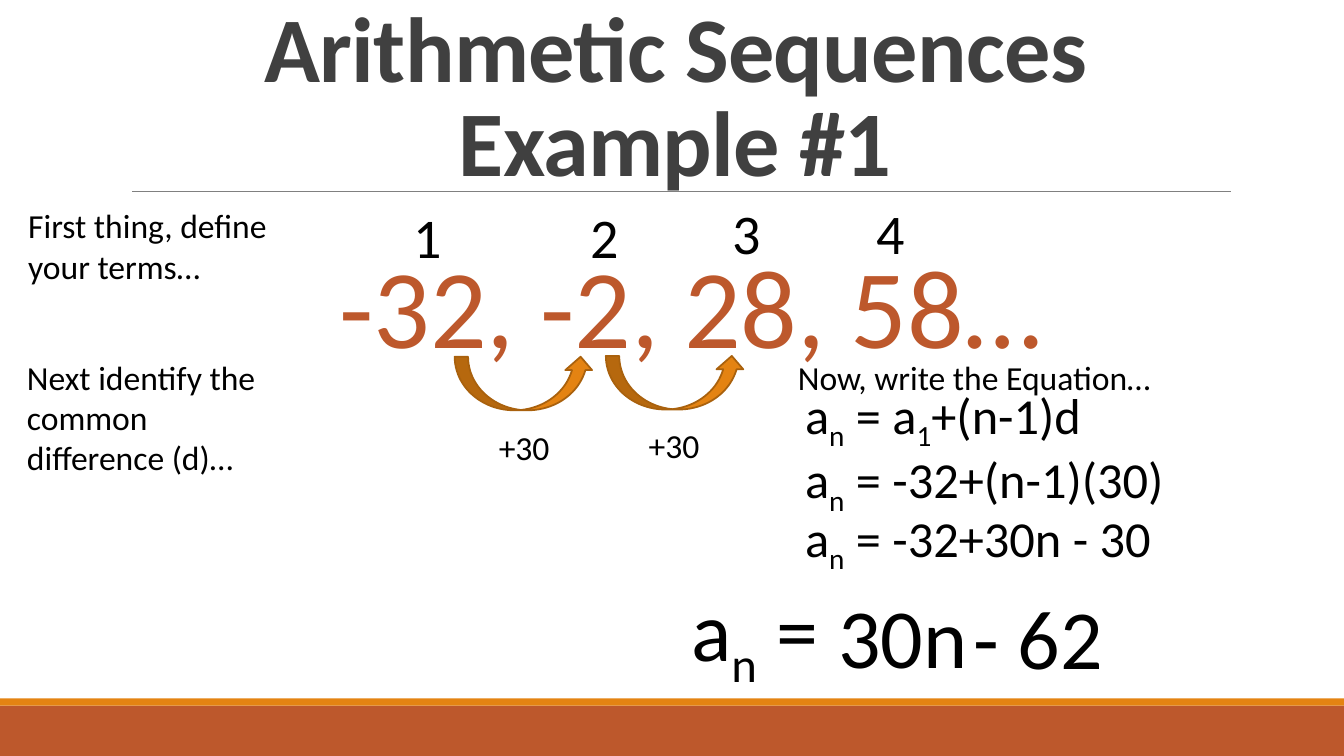
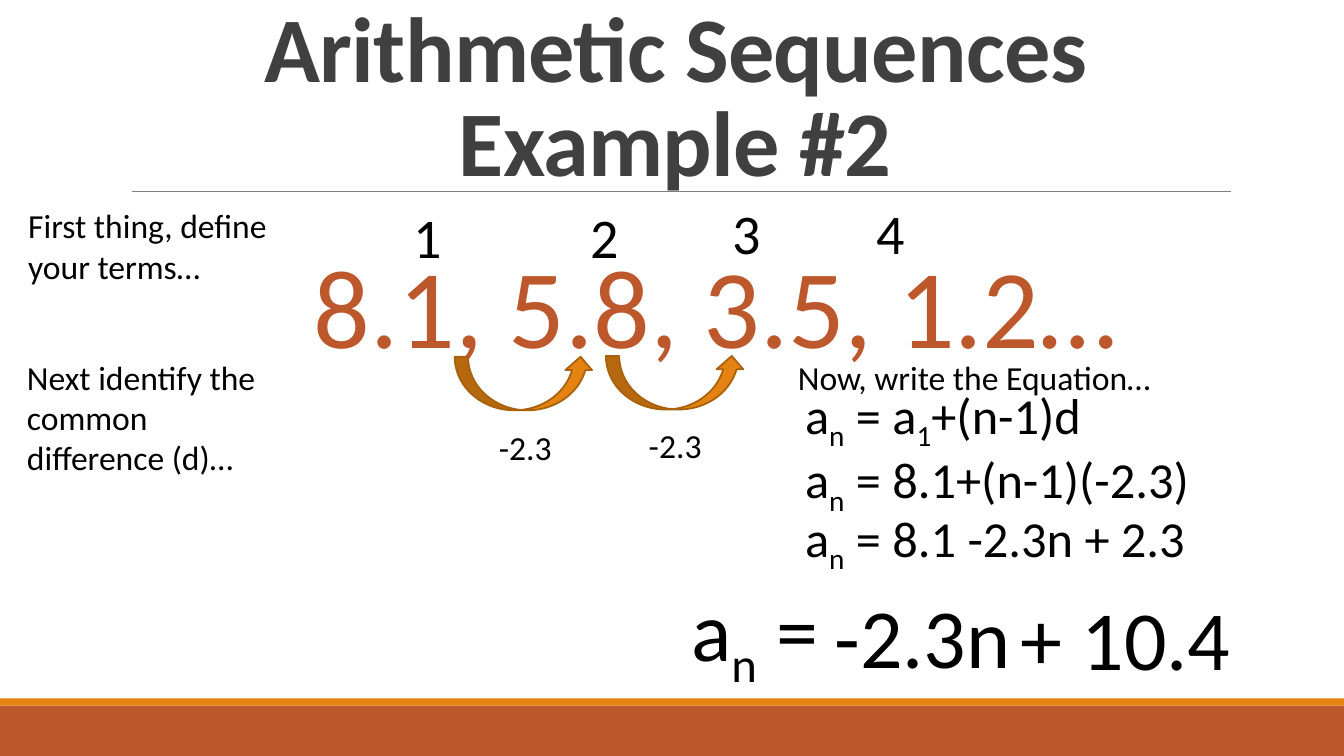
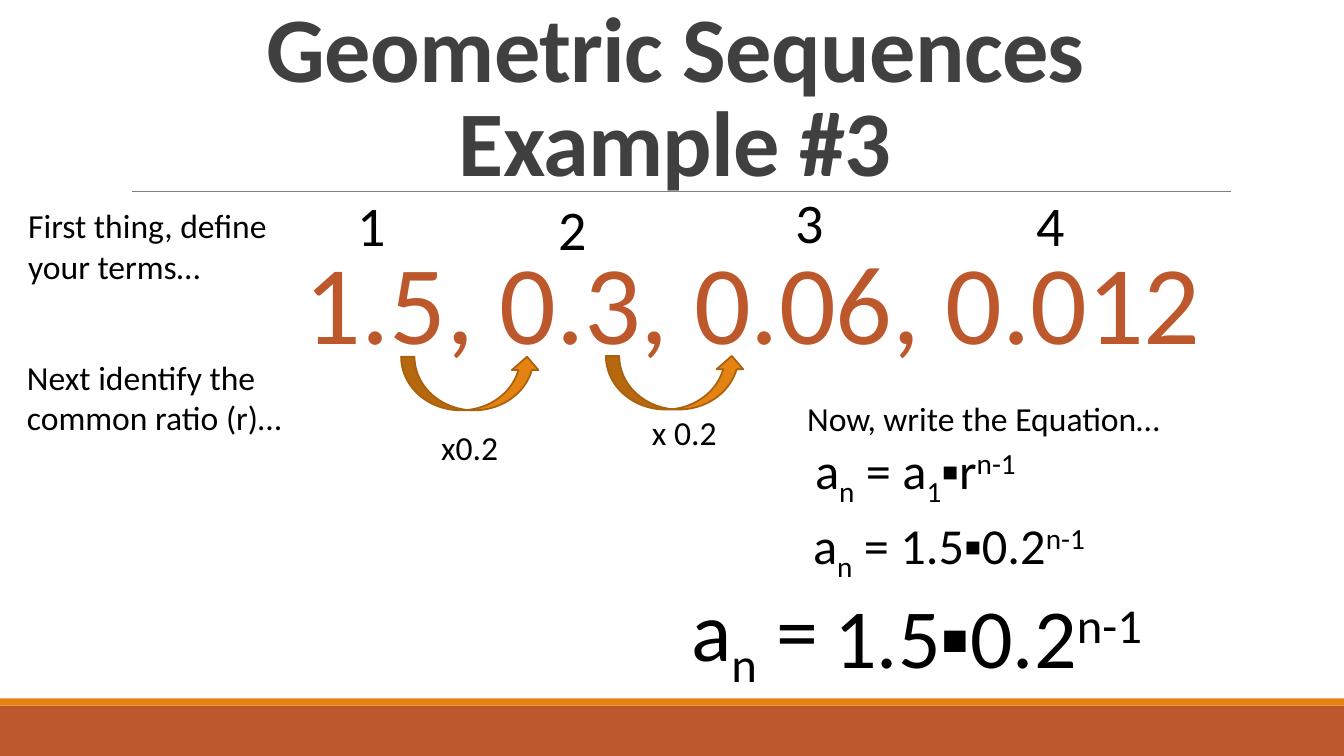
from dataclasses import dataclass
from typing import NamedTuple

from lxml import etree
from pptx import Presentation
from pptx import util as u
from pptx.dml import color
from pptx.enum import shapes, text
from pptx.oxml import ns

COLOURS = {
    "band": "BD582C",
    "stripe": "E48312",
    "arrow edge": "A9610D",
    "rule": "808080",
    "title": "404040",
    "ink": "000000",
}
FONT = "Calibri"
SLIDE_W, SLIDE_H = 33.87, 19.05
SUB, SUPER = -25, 30


# Content types; every length is in centimetres
class Box(NamedTuple):
    left: float
    top: float
    width: float
    height: float


class Spot(NamedTuple):
    left: float
    top: float


class Run(NamedTuple):
    text: str
    baseline: int = 0


class Formula(NamedTuple):
    runs: tuple[Run, ...]
    box: Box
    size: float = 36


class StepLabel(NamedTuple):
    text: str
    box: Box


@dataclass(frozen=True)
class Style:
    size: float
    colour: str = "ink"
    bold: bool = False
    tracking: int = 0
    align: text.PP_ALIGN = text.PP_ALIGN.LEFT
    anchor: text.MSO_ANCHOR = text.MSO_ANCHOR.TOP
    line_spacing: float = 1.0
    space_before: float = 0
    side_inset: float = 0.25
    indent: float = 0
    wrap: bool = True
    grow: bool = True


@dataclass(frozen=True)
class Example:
    title: str
    sequence: str
    sequence_at: Spot
    sequence_indent: float
    next_step: str
    next_height: float
    term_spots: tuple[Spot, ...]
    equation_prompt_at: Spot
    formulas: tuple[Formula, ...]
    arrow_spots: tuple[Spot, ...]
    step_labels: tuple[StepLabel, ...]


TITLE = Style(66, "title", bold=True, tracking=-50, align=text.PP_ALIGN.CENTER,
              anchor=text.MSO_ANCHOR.BOTTOM, line_spacing=0.85, grow=False)


# Drawing
def rgb(name: str) -> color.RGBColor:
    return color.RGBColor.from_string(COLOURS[name])


def lengths(box: Box) -> list[u.Length]:
    return [u.Cm(value) for value in box]


def add_text(slide, box: Box, runs: tuple[Run, ...], style: Style) -> None:
    frame = slide.shapes.add_textbox(*lengths(box)).text_frame
    frame.word_wrap = style.wrap
    frame.auto_size = (text.MSO_AUTO_SIZE.SHAPE_TO_FIT_TEXT if style.grow
                       else text.MSO_AUTO_SIZE.NONE)
    frame.vertical_anchor = style.anchor
    frame.margin_left = frame.margin_right = u.Cm(style.side_inset)
    paragraph = frame.paragraphs[0]
    paragraph.alignment = style.align
    paragraph.line_spacing = style.line_spacing
    paragraph.space_before = u.Pt(style.space_before)
    if style.indent:
        paragraph._p.get_or_add_pPr().set("marL", str(u.Cm(style.indent)))
    for part in runs:
        run = paragraph.add_run()
        run.text = part.text
        run.font.name = FONT
        run.font.size = u.Pt(style.size)
        run.font.bold = style.bold
        run.font.color.rgb = rgb(style.colour)
        properties = run._r.get_or_add_rPr()
        if part.baseline:
            properties.set("baseline", str(part.baseline * 1000))
        if style.tracking:
            properties.set("spc", str(style.tracking))


def add_filled(slide, kind: shapes.MSO_SHAPE, box: Box, fill: str, edge: str = "") -> None:
    shape = slide.shapes.add_shape(kind, *lengths(box))
    shape.shadow.inherit = False
    shape.fill.solid()
    shape.fill.fore_color.rgb = rgb(fill)
    if edge:
        shape.line.color.rgb = rgb(edge)
        shape.line.width = u.Pt(1.25)
    else:
        shape.line.fill.background()


def add_frame(slide, title: str) -> None:
    """Footer bands, title rule and title shared by all slides."""
    add_filled(slide, shapes.MSO_SHAPE.RECTANGLE, Box(0, 17.78, SLIDE_W, 1.27), "band")
    add_filled(slide, shapes.MSO_SHAPE.RECTANGLE, Box(0, 17.6, SLIDE_W, 0.18), "stripe")
    rule = slide.shapes.add_connector(
        shapes.MSO_CONNECTOR.STRAIGHT, *lengths(Box(3.33, 4.83, 31.01, 4.83)))
    rule.line.color.rgb = rgb("rule")
    rule.line.width = u.Pt(0.5)
    etree.SubElement(rule._element.spPr, ns.qn("a:effectLst"))
    add_text(slide, Box(3.05, 1.02, 27.94, 4.04), (Run(title),), TITLE)


def add_example(deck, example: Example) -> None:
    slide = deck.slides.add_slide(deck.slide_layouts[6])
    add_frame(slide, example.title)
    sequence_style = Style(80, "band", align=text.PP_ALIGN.CENTER, line_spacing=0.8,
                           space_before=12, side_inset=0,
                           indent=example.sequence_indent, grow=False)
    add_text(slide, Box(*example.sequence_at, 27.94, 3.07),
             (Run(example.sequence),), sequence_style)

    # Prompts
    for prompt, box in (
        ("First thing, define your terms…", Box(0.46, 5.05, 6.93, 2.31)),
        (example.next_step, Box(0.43, 8.86, 6.93, example.next_height)),
        ("Now, write the Equation…", Box(*example.equation_prompt_at, 11.25, 1.27)),
    ):
        add_text(slide, box, (Run(prompt),), Style(24))

    # Term numbers, formulas and steps between terms
    for number, spot in enumerate(example.term_spots, start=1):
        add_text(slide, Box(*spot, 1.9, 1.96), (Run(str(number)),), Style(40))
    for formula in (ANSWER_START, *example.formulas):
        add_text(slide, formula.box, formula.runs, Style(formula.size))
    for spot in example.arrow_spots:
        add_filled(slide, shapes.MSO_SHAPE.CURVED_UP_ARROW,
                   Box(*spot, 3.51, 1.35), "stripe", "arrow edge")
    for label in example.step_labels:
        add_text(slide, label.box, (Run(label.text),), Style(24, wrap=False))


# Content
NTH_TERM = (Run("a"), Run("n", SUB))
FIRST_TERM = (*NTH_TERM, Run(" = a"), Run("1", SUB))
POWER = Run("n-1", SUPER)
ANSWER_START = Formula((*NTH_TERM, Run(" =")), Box(17.17, 14.43, 4.32, 2.82), 60)


def equation(left: float, top: float, *runs: Run) -> Formula:
    return Formula(runs, Box(left, top, 11.25, 1.8))


def answer(left: float, top: float, width: float, *runs: Run) -> Formula:
    return Formula(runs, Box(left, top, width, 2.82), 60)


def arithmetic(number: int, sequence: str, indent: float, step: str, label_width: float,
               substituted: str, expanded: str, answers: tuple[Formula, ...]) -> Example:
    return Example(
        title=f"Arithmetic Sequences Example #{number}",
        sequence=sequence,
        sequence_at=Spot(3.05, 6.48),
        sequence_indent=indent,
        next_step="Next identify the common difference (d)…",
        next_height=3.33,
        term_spots=(Spot(10.16, 4.98), Spot(14.63, 4.98),
                    Spot(18.21, 4.88), Spot(21.84, 4.88)),
        equation_prompt_at=Spot(19.86, 8.86),
        formulas=(
            *answers,
            equation(20.04, 9.55, *FIRST_TERM, Run("+(n-1)d")),
            equation(20.04, 11.18, *NTH_TERM, Run(substituted)),
            equation(20.04, 12.65, *NTH_TERM, Run(expanded)),
        ),
        arrow_spots=(Spot(11.46, 8.99), Spot(15.27, 8.97)),
        step_labels=(StepLabel(step, Box(12.32, 10.64, label_width, 1.27)),
                     StepLabel(step, Box(16.1, 10.57, label_width, 1.27))),
    )


EXAMPLES = (
    arithmetic(1, "-32, -2, 28, 58…", 0.79, "+30", 1.8,
               " = -32+(n-1)(30)", " = -32+30n - 30",
               (answer(20.88, 14.6, 11.25, Run("30n")),
                answer(23.8, 14.63, 5.99, Run(" - 62")))),
    arithmetic(2, "8.1, 5.8, 3.5, 1.2…", 2.06, "-2.3", 1.85,
               " = 8.1+(n-1)(-2.3)", " = 8.1 -2.3n + 2.3",
               (answer(20.78, 14.6, 11.25, Run("-2.3n")),
                answer(25.48, 14.66, 5.99, Run("+ 10.4")))),
    Example(
        title="Geometric Sequences Example #3",
        sequence="1.5, 0.3, 0.06, 0.012",
        sequence_at=Spot(3.99, 6.38),
        sequence_indent=2.06,
        next_step="Next identify the common ratio (r)…",
        next_height=2.31,
        term_spots=(Spot(8.76, 4.67), Spot(13.82, 4.78),
                    Spot(19.81, 4.6), Spot(25.88, 4.67)),
        equation_prompt_at=Spot(20.09, 9.91),
        formulas=(
            answer(20.78, 14.6, 11.25, Run("1.5▪0.2"), POWER),
            equation(20.29, 10.95, *FIRST_TERM, Run("▪r"), POWER),
            equation(20.24, 12.83, *NTH_TERM, Run(" = 1.5▪0.2"), POWER),
        ),
        arrow_spots=(Spot(10.11, 8.99), Spot(15.27, 8.97)),
        step_labels=(StepLabel("x0.2", Box(10.87, 10.64, 2.03, 1.27)),
                     StepLabel("x 0.2", Box(16.18, 10.26, 2.16, 1.27))),
    ),
)


def main() -> None:
    deck = Presentation()
    deck.slide_width, deck.slide_height = u.Cm(SLIDE_W), u.Cm(SLIDE_H)
    for example in EXAMPLES:
        add_example(deck, example)
    deck.save("out.pptx")


if __name__ == "__main__":
    main()
